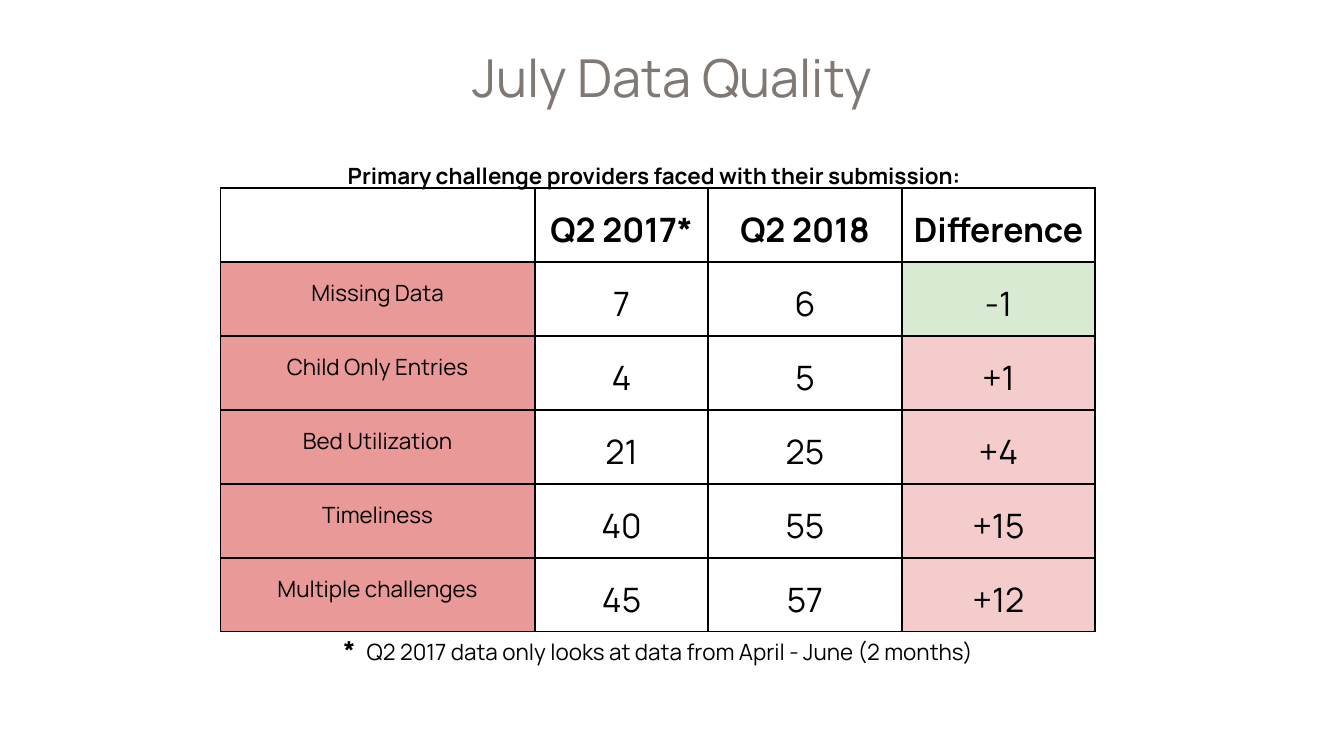
from typing import NamedTuple

from lxml import etree
from pptx import Presentation
from pptx.dml.color import RGBColor
from pptx.enum.text import MSO_ANCHOR, PP_ALIGN
from pptx.oxml.ns import qn
from pptx.util import Inches, Pt

CENTER = PP_ALIGN.CENTER
TOP, MIDDLE = MSO_ANCHOR.TOP, MSO_ANCHOR.MIDDLE
FONT = "Manrope"
BLACK = RGBColor(0x00, 0x00, 0x00)
TAUPE = RGBColor(0x80, 0x78, 0x73)
RED = RGBColor(0xEA, 0x99, 0x99)
PINK = RGBColor(0xF4, 0xCC, 0xCC)
GREEN = RGBColor(0xD9, 0xEA, 0xD3)


class Challenge(NamedTuple):
    name: str
    q2_2017: int
    q2_2018: int


SLIDE_WIDTH = 10
HEADERS = ["", "Q2 2017*", "Q2 2018", "Difference"]
COL_WIDTHS = [2.34, 1.29, 1.44, 1.44]
ROW_HEIGHT = 0.55
CHALLENGES = [
    Challenge("Missing Data", 7, 6),
    Challenge("Child Only Entries", 4, 5),
    Challenge("Bed Utilization", 21, 25),
    Challenge("Timeliness", 40, 55),
    Challenge("Multiple challenges", 45, 57),
]


def add_run(p, text, *, size, bold=False, color=BLACK):
    r = p.add_run()
    r.text = text
    r.font.name = FONT
    r.font.size = Pt(size)
    r.font.bold = bold
    r.font.color.rgb = color


def add_box(s, left, top, width, height, *, inset_top=0.1, inset_bottom=0.1,
            anchor=TOP, spacing=1.0):
    box = s.shapes.add_textbox(Inches(left), Inches(top), Inches(width), Inches(height))
    tf = box.text_frame
    tf.word_wrap = True
    tf.vertical_anchor = anchor
    tf.margin_left = tf.margin_right = Inches(0.1)
    tf.margin_top, tf.margin_bottom = Inches(inset_top), Inches(inset_bottom)
    p = tf.paragraphs[0]
    p.alignment = CENTER
    p.line_spacing = spacing
    return p


def add_borders(cell) -> None:
    tc_pr = cell._tc.get_or_add_tcPr()
    for i, side in enumerate(("a:lnL", "a:lnR", "a:lnT", "a:lnB")):
        ln = etree.Element(qn(side), w=str(Pt(1)))
        fill = etree.SubElement(ln, qn("a:solidFill"))
        etree.SubElement(fill, qn("a:srgbClr"), val=str(BLACK))
        tc_pr.insert(i, ln)


def fill_cell(cell, text: str, *, size=18, bold=False, fill=None) -> None:
    cell.margin_left = cell.margin_right = Inches(0.07)
    cell.margin_top = cell.margin_bottom = Inches(0.07)
    if fill is None:
        cell.fill.background()
    else:
        cell.fill.solid()
        cell.fill.fore_color.rgb = fill
    add_borders(cell)
    if text:
        p = cell.text_frame.paragraphs[0]
        p.alignment = CENTER
        p.line_spacing = 1.2
        add_run(p, text, size=size, bold=bold)


def add_challenge_table(s) -> None:
    rows = len(CHALLENGES) + 1
    table = s.shapes.add_table(
        rows, len(HEADERS), Inches(1.64), Inches(1.4),
        Inches(sum(COL_WIDTHS)), Inches(rows * ROW_HEIGHT)).table
    table.first_row = table.horz_banding = False
    for column, width in zip(table.columns, COL_WIDTHS):
        column.width = Inches(width)
    for row in table.rows:
        row.height = Inches(ROW_HEIGHT)
    for col, header in enumerate(HEADERS):
        fill_cell(table.cell(0, col), header, bold=True)
    for row, item in enumerate(CHALLENGES, 1):
        change = item.q2_2018 - item.q2_2017
        fill_cell(table.cell(row, 0), item.name, size=12, fill=RED)
        fill_cell(table.cell(row, 1), str(item.q2_2017))
        fill_cell(table.cell(row, 2), str(item.q2_2018))
        fill_cell(table.cell(row, 3), f"{change:+d}", fill=GREEN if change < 0 else PINK)


def main() -> None:
    prs = Presentation()
    prs.slide_width = Inches(SLIDE_WIDTH)
    prs.slide_height = Inches(SLIDE_WIDTH * 9 / 16)
    s = prs.slides.add_slide(prs.slide_layouts[6])

    title = add_box(s, 0.34, 0.24, 9.32, 0.63)
    add_run(title, "July Data Quality", size=28, color=TAUPE)

    note = add_box(s, 0.1, 4.21, 9.6, 0.33, spacing=1.38)
    add_run(note, "*", size=14, bold=True)
    add_run(note, " ", size=30, bold=True)
    add_run(note, "Q2 2017 data only looks at data from April - June (2 months)", size=12)

    add_challenge_table(s)

    heading = add_box(s, 1.16, 1.21, 6.92, 0.34, inset_top=0, inset_bottom=0.22,
                      anchor=MIDDLE, spacing=1.38)
    heading._p.get_or_add_pPr().set("indent", str(Inches(0.5)))
    add_run(heading, "Primary challenge providers faced with their submission:",
            size=12, bold=True)

    prs.save("out.pptx")


if __name__ == "__main__":
    main()
